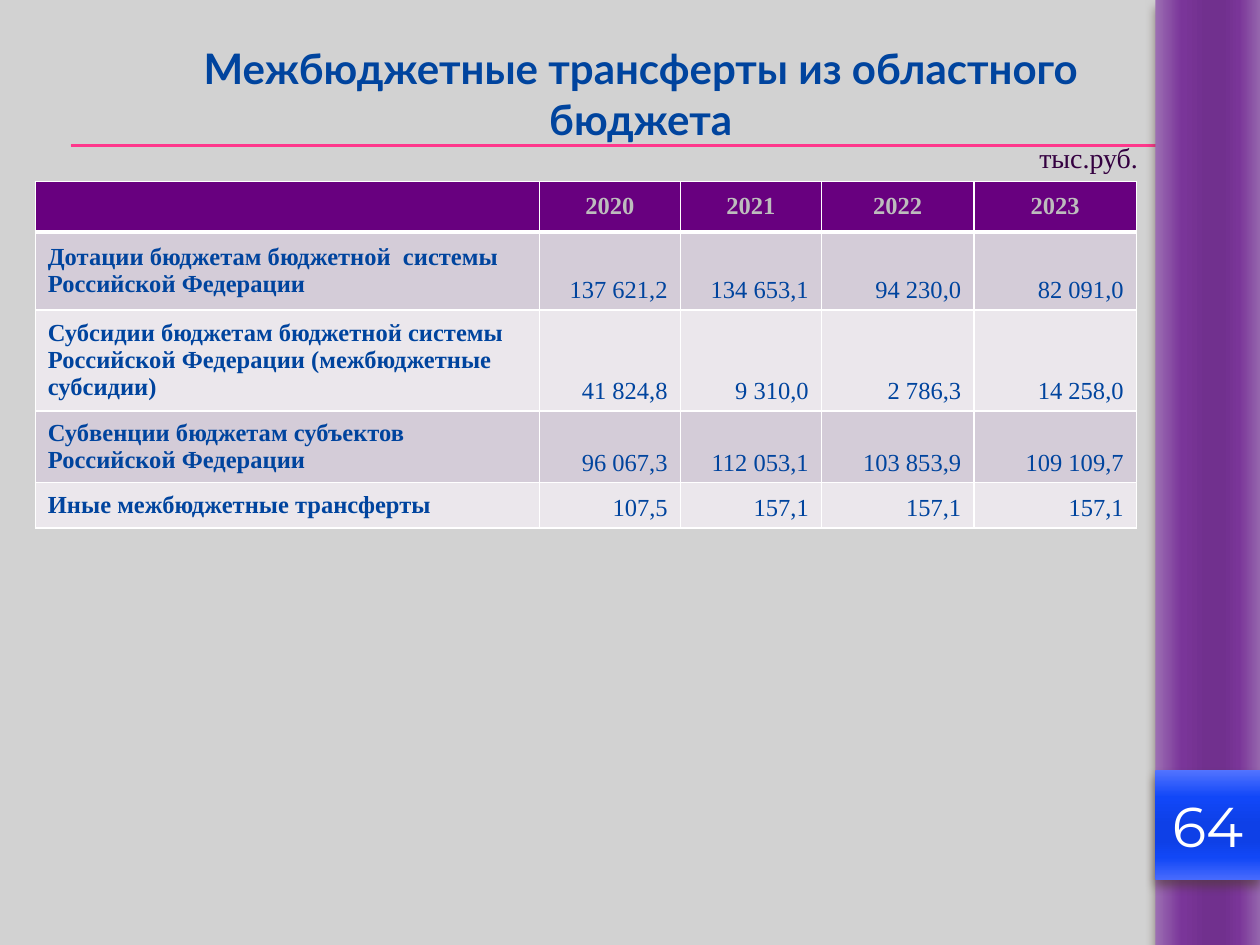
"""Build the slide on intergovernmental transfers from the regional budget."""
import pptx
import pptx.dml.color
import pptx.enum.shapes
import pptx.enum.text
import pptx.oxml
import pptx.oxml.ns
import pptx.util
from lxml import etree

TITLE = "Межбюджетные трансферты из областного бюджета"
UNIT = "тыс.руб."
PAGE_NUMBER = "64"
ROWS = [
    ("", "2020", "2021", "2022", "2023"),
    ("Дотации бюджетам бюджетной  системы Российской Федерации",
     "137 621,2", "134 653,1", "94 230,0", "82 091,0"),
    ("Субсидии бюджетам бюджетной системы Российской Федерации (межбюджетные субсидии)",
     "41 824,8", "9 310,0", "2 786,3", "14 258,0"),
    ("Субвенции бюджетам субъектов Российской Федерации",
     "96 067,3", "112 053,1", "103 853,9", "109 109,7"),
    ("Иные межбюджетные трансферты", "107,5", "157,1", "157,1", "157,1"),
]
COLUMN_WIDTHS = [4, 1.12, 1.12, 1.21, 1.29]
ROW_HEIGHTS = [0.36, 0.62, 0.8, 0.57, 0.36]
WIDTH, HEIGHT = 10, 7.5
BAND = 0.83
STOPS = [0, 25, 50, 65, 80, 100]

THEME = {
    "background": "D2D2D2", "rule": "FF388C", "text": "00449E", "outline": "4E005F",
    "unit": "340040", "header": "68007F", "header_text": "BDBDBD", "white": "FFFFFF",
    "stripes": ["EBE7EC", "D4CCD8"], "shadow": "4E3B30",
    "band": ["9C6FB3", "7A3599", "71308E", "71308E", "7A3598", "9566AD"],
    "badge": ["5374FF", "1147F8", "0E40E7", "0E40E7", "1147F6", "476AFD"],
    "title_font": "Lato", "number_font": "Montserrat", "body_font": "Times New Roman",
    "title_size": 24, "number_size": 32, "unit_size": 16, "table_size": 14,
}
ALIGN = pptx.enum.text.PP_ALIGN
ANCHOR = pptx.enum.text.MSO_ANCHOR
qn = pptx.oxml.ns.qn


def inches(*values):
    return [pptx.util.Inches(value) for value in values]


def rgb(name):
    return pptx.dml.color.RGBColor.from_string(name)


def write(frame, text, font, size, color, align, bold=False):
    frame.text = text
    para = frame.paragraphs[0]
    para.alignment = align
    for span in para.runs:
        span.font.name = font
        span.font.size = pptx.util.Pt(size)
        span.font.bold = bold
        span.font.color.rgb = rgb(color)


def line_xml(tag, color, points):
    return pptx.oxml.parse_xml(
        f'<a:{tag} {pptx.oxml.ns.nsdecls("a")} w="{int(points * 12700)}"><a:solidFill>'
        f'<a:srgbClr val="{color}"/></a:solidFill></a:{tag}>')


def add_rule(page, y):
    rule = page.shapes.add_connector(
        pptx.enum.shapes.MSO_CONNECTOR.STRAIGHT, *inches(0.56, y, WIDTH, y))
    rule.line.color.rgb = rgb(THEME["rule"])
    rule.line.width = pptx.util.Pt(0.75)
    etree.SubElement(rule._element.spPr, qn("a:effectLst"))


def add_glossy_box(page, place, colors):
    box = page.shapes.add_shape(pptx.enum.shapes.MSO_SHAPE.RECTANGLE, *inches(*place))
    box.line.fill.background()
    box.fill.gradient()
    box.fill.gradient_angle = 270
    properties = box._element.spPr
    stops = properties.find(f".//{qn('a:gsLst')}")
    for stop in list(stops):
        stops.remove(stop)
    for position, color in zip(STOPS, colors):
        stop = etree.SubElement(stops, qn("a:gs"), pos=str(position * 1000))
        etree.SubElement(stop, qn("a:srgbClr"), val=color)
    box.shadow.inherit = False
    shadow = etree.SubElement(
        properties.find(qn("a:effectLst")), qn("a:outerShdw"),
        blurRad="76200", dist="50800", dir="5400000", rotWithShape="0")
    tint = etree.SubElement(shadow, qn("a:srgbClr"), val=THEME["shadow"])
    etree.SubElement(tint, qn("a:alpha"), val="60000")
    return box


def style_cell(cell, text, row, column):
    header, label = row == 0, column == 0
    color = THEME["header_text"] if header else THEME["text"]
    align = ALIGN.CENTER if header else ALIGN.LEFT if label else ALIGN.RIGHT
    write(cell.text_frame, text, THEME["body_font"], THEME["table_size"],
          color, align, bold=header or label)
    cell.vertical_anchor = ANCHOR.MIDDLE if header or label else ANCHOR.BOTTOM
    cell.fill.solid()
    cell.fill.fore_color.rgb = rgb(THEME["header"] if header else THEME["stripes"][row % 2])
    borders = {"lnL": 1, "lnR": 1, "lnT": 3 if row == 1 else 1, "lnB": 3 if header else 1}
    for index, (tag, points) in enumerate(borders.items()):
        cell._tc.get_or_add_tcPr().insert(index, line_xml(tag, THEME["white"], points))


def add_transfers(page):
    table = page.shapes.add_table(
        len(ROWS), len(COLUMN_WIDTHS),
        *inches(0.28, 1.44, sum(COLUMN_WIDTHS), sum(ROW_HEIGHTS))).table
    for column, width in zip(table.columns, COLUMN_WIDTHS):
        column.width = pptx.util.Inches(width)
    for row, height in zip(table.rows, ROW_HEIGHTS):
        row.height = pptx.util.Inches(height)
    for row, values in enumerate(ROWS):
        for column, text in enumerate(values):
            style_cell(table.cell(row, column), text, row, column)


def main():
    deck = pptx.Presentation()
    deck.slide_width, deck.slide_height = inches(WIDTH, HEIGHT)
    page = deck.slides.add_slide(deck.slide_layouts[6])
    page.background.fill.solid()
    page.background.fill.fore_color.rgb = rgb(THEME["background"])

    for y in (1.15, 1.16):
        add_rule(page, y)
    band_left = WIDTH - BAND / 2 - HEIGHT / 2
    band = add_glossy_box(
        page, (band_left, (HEIGHT - BAND) / 2, HEIGHT, BAND), THEME["band"])
    band.rotation = 270
    badge = add_glossy_box(page, (WIDTH - BAND, 6.11, BAND, 0.87), THEME["badge"])
    frame = badge.text_frame
    frame.margin_left = frame.margin_right = 0
    frame.vertical_anchor = ANCHOR.MIDDLE
    write(frame, PAGE_NUMBER, THEME["number_font"], THEME["number_size"],
          THEME["white"], ALIGN.CENTER)

    title = page.shapes.add_textbox(*inches(0.91, 0.29, 8.35, 0.91)).text_frame
    title.word_wrap = True
    write(title, TITLE, THEME["title_font"], THEME["title_size"],
          THEME["text"], ALIGN.CENTER, bold=True)
    title.paragraphs[0].runs[0].font._element.insert(
        0, line_xml("ln", THEME["outline"], 0.75))

    add_transfers(page)
    unit = page.shapes.add_textbox(*inches(8.15, 1.07, 1, 0.37)).text_frame
    unit.word_wrap = False
    write(unit, UNIT, THEME["body_font"], THEME["unit_size"], THEME["unit"], ALIGN.LEFT)
    deck.save("out.pptx")


if __name__ == "__main__":
    main()
